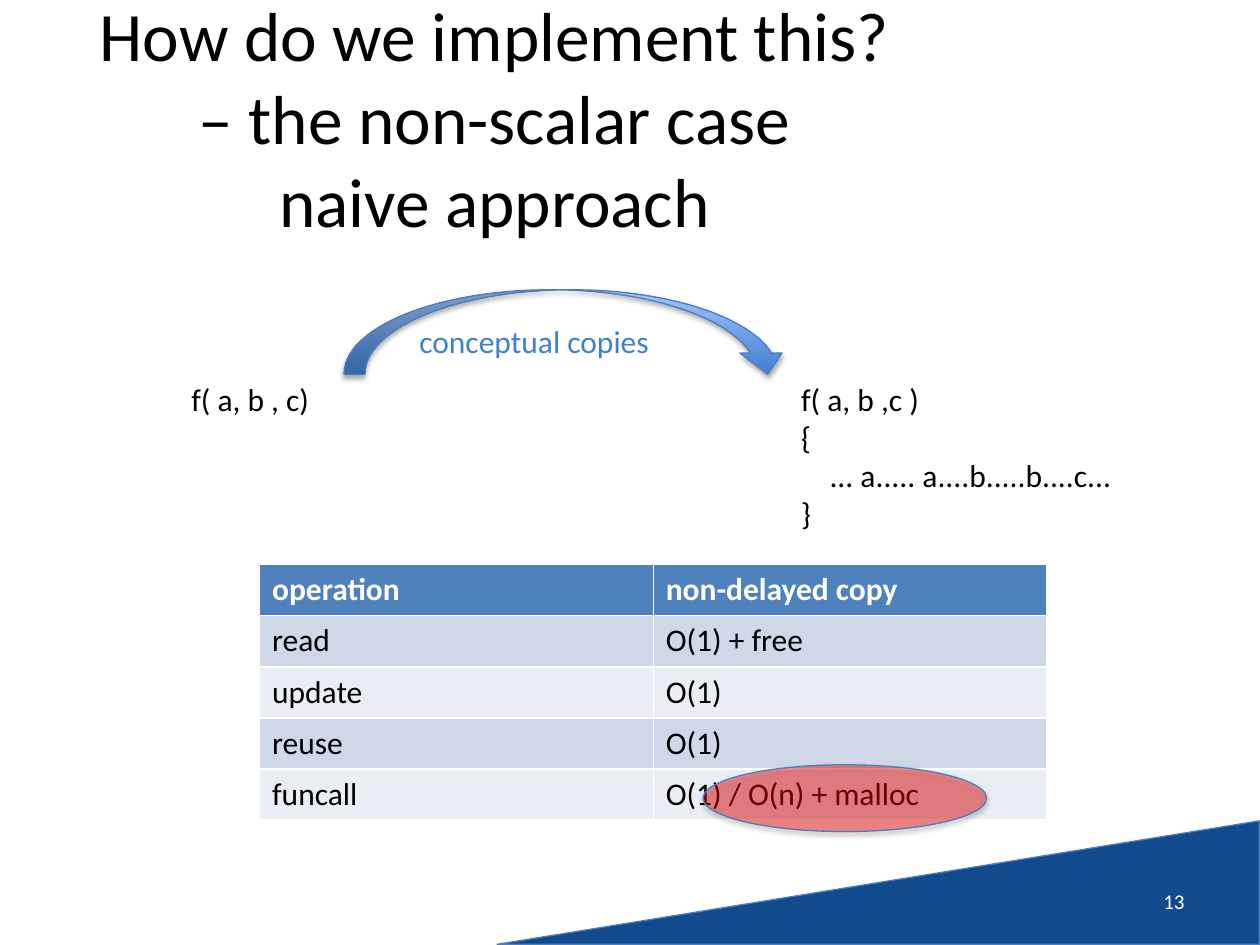
from lxml import etree
from pptx import Presentation
from pptx.dml.color import RGBColor
from pptx.enum.shapes import MSO_SHAPE
from pptx.enum.text import MSO_ANCHOR, PP_ALIGN
from pptx.oxml.ns import qn
from pptx.util import Inches, Pt

LEFT, MID, RIGHT = PP_ALIGN.LEFT, PP_ALIGN.CENTER, PP_ALIGN.RIGHT
TOP, MIDDLE = MSO_ANCHOR.TOP, MSO_ANCHOR.MIDDLE
WEDGE, ARROW, OVAL = MSO_SHAPE.RIGHT_TRIANGLE, MSO_SHAPE.CURVED_DOWN_ARROW, MSO_SHAPE.OVAL
HEX = {
    "black": "000000", "white": "FFFFFF", "navy": "114B8E", "edge": "4B7EBC",
    "blue": "3F80CD", "deep": "3F80CE", "pale": "A4C4FF", "red": "FF0000",
    "head": "4F81BD", "odd": "D0D8E8", "even": "E9EDF4",
}
RGB = {name: RGBColor.from_string(code) for name, code in HEX.items()}

prs = Presentation()
prs.slide_width, prs.slide_height = Inches(10), Inches(7.5)
slide = prs.slides.add_slide(prs.slide_layouts[6])


def add_text(box, lines, size=18, tint="black", align=LEFT, anchor=TOP, wrap=True):
    frame = slide.shapes.add_textbox(*map(Inches, box)).text_frame
    frame.word_wrap = wrap
    frame.vertical_anchor = anchor
    frame.text = lines
    for para in frame.paragraphs:
        para.alignment = align
        para.font.name = "Calibri"
        para.font.size = Pt(size)
        para.font.color.rgb = RGB[tint]


def add_form(kind, box, tint=None):
    form = slide.shapes.add_shape(kind, *map(Inches, box))
    if tint:
        form.fill.solid()
        form.fill.fore_color.rgb = RGB[tint]
    form.line.color.rgb = RGB["edge"]
    form.line.width = Pt(0.75)
    form.shadow.inherit = False
    glow = etree.SubElement(
        form._element.spPr.find(qn("a:effectLst")), qn("a:outerShdw"),
        blurRad=str(Pt(3.1)), dist=str(Pt(1.8)), dir="5400000", rotWithShape="0")
    shade = etree.SubElement(glow, qn("a:srgbClr"), val=HEX["black"])
    etree.SubElement(shade, qn("a:alpha"), val="35000")
    return form


wedge = add_form(WEDGE, (6.48, 3.98, 0.98, 6.05), "navy")
wedge.rotation = 270

add_text((0.5, 0.3, 6.85, 1.25),
         "How do we implement this? – the non-scalar case\vnaive approach",
         39.6, align=MID, anchor=MIDDLE)
add_text((7.17, 6.95, 2.33, 0.4), "13", 12, "white", RIGHT, MIDDLE)

add_text((1.42, 2.97, 1.15, 0.4), "f( a, b , c)", wrap=False)
arrow = add_form(ARROW, (2.73, 2.3, 3.53, 0.67))
arrow.fill.gradient()
arrow.fill.gradient_angle = 90
for stop, tint in zip(arrow.fill.gradient_stops, ("deep", "pale")):
    stop.color.rgb = RGB[tint]
add_text((6.26, 2.97, 2.69, 1.31),
         "f( a, b ,c )\n{\n    ... a..... a....b.....b....c...\n}", wrap=False)
add_text((3.23, 2.51, 2.04, 0.4), "conceptual copies", tint="blue", wrap=False)

rows = [
    ("operation", "non-delayed copy"),
    ("read", "O(1) + free"),
    ("update", "O(1)"),
    ("reuse", "O(1)"),
    ("funcall", "O(1) / O(n) + malloc"),
]
table = slide.shapes.add_table(
    len(rows), 2, Inches(2.06), Inches(4.48), Inches(6.25), Inches(2.03)).table
for r, row in enumerate(rows):
    for c, word in enumerate(row):
        cell = table.cell(r, c)
        cell.text = word
        cell.fill.solid()
        cell.fill.fore_color.rgb = RGB["head" if r == 0 else "odd" if r % 2 else "even"]
        font = cell.text_frame.paragraphs[0].font
        font.name = "Calibri"
        font.size = Pt(18)
        font.bold = r == 0
        font.color.rgb = RGB["white" if r == 0 else "black"]

oval = add_form(OVAL, (5.58, 6.07, 2.25, 0.53), "red")
tone = oval._element.spPr.find(qn("a:solidFill"))[0]
etree.SubElement(tone, qn("a:alpha"), val="40000")

prs.save("out.pptx")
